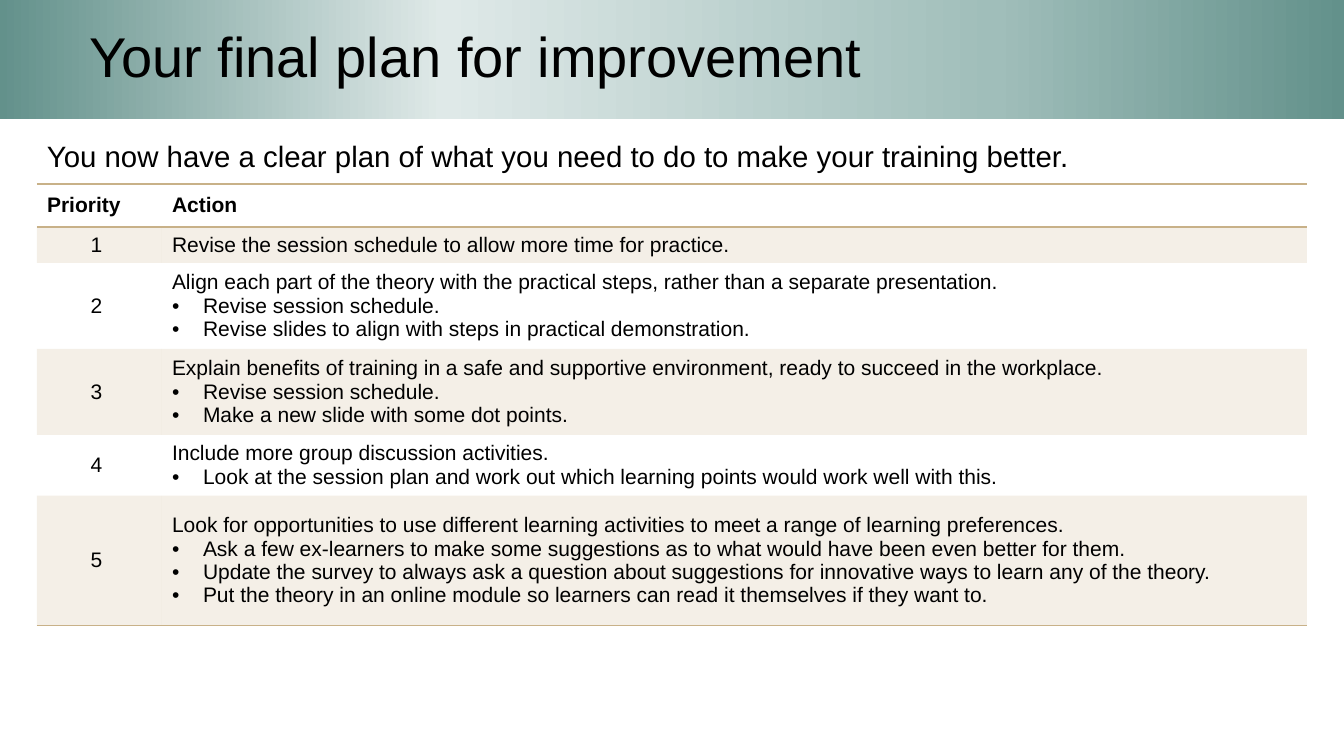
import pptx
import pptx.util
import pptx.oxml
import pptx.oxml.ns
import pptx.dml.color
import pptx.enum.shapes
import pptx.enum.text

PX = 914400 / 100.8
BLACK, SAND = "000000", "C8B188"
STOPS = [(0, "63918B"), (33, "DFE9E8"), (74, "A0BEBA"), (100, "63918B")]
ROWS = [
    (36, ["Revise the session schedule to allow more time for practice."]),
    (86, ["Align each part of the theory with the practical steps, rather than a separate presentation.",
          "Revise session schedule.",
          "Revise slides to align with steps in practical demonstration."]),
    (86, ["Explain benefits of training in a safe and supportive environment, ready to succeed in the workplace.",
          "Revise session schedule.",
          "Make a new slide with some dot points."]),
    (60, ["Include more group discussion activities.",
          "Look at the session plan and work out which learning points would work well with this."]),
    (130, ["Look for opportunities to use different learning activities to meet a range of learning preferences.",
           "Ask a few ex-learners to make some suggestions as to what would have been even better for them.",
           "Update the survey to always ask a question about suggestions for innovative ways to learn any of the theory.",
           "Put the theory in an online module so learners can read it themselves if they want to."]),
]


def px(n):
    return pptx.util.Emu(round(n * PX))


def tint(code):
    return pptx.dml.color.RGBColor.from_string(code)


def node(xml):
    return pptx.oxml.parse_xml(xml.replace(" ", f" {pptx.oxml.ns.nsdecls('a')} ", 1))


def write(para, text, size, bold=False):
    run = para.add_run()
    run.text = text
    run.font.name = "Arial"
    run.font.size = pptx.util.Pt(size)
    run.font.bold = bold
    run.font.color.rgb = tint(BLACK)


def banner(slide, box, text):
    shape = slide.shapes.add_shape(pptx.enum.shapes.MSO_SHAPE.RECTANGLE, *map(px, box))
    shape.shadow.inherit = False
    shape.line.fill.background()
    shape.fill.gradient()
    shape.fill.gradient_angle = 0
    stops = shape._element.spPr.find(".//" + pptx.oxml.ns.qn("a:gsLst"))
    for stop in list(stops):
        stops.remove(stop)
    for spot, code in STOPS:
        stops.append(node(f'<a:gs pos="{spot * 1000}"><a:srgbClr val="{code}"/></a:gs>'))
    frame = shape.text_frame
    frame.word_wrap = True
    frame.margin_left = px(89)
    frame.vertical_anchor = pptx.enum.text.MSO_ANCHOR.MIDDLE
    para = frame.paragraphs[0]
    para.alignment = pptx.enum.text.PP_ALIGN.LEFT
    para.line_spacing = 0.9
    write(para, text, 40)


def intro(slide, box, text):
    frame = slide.shapes.add_textbox(*map(px, box)).text_frame
    frame.word_wrap = True
    write(frame.paragraphs[0], text, 21)


def rule(cell, side):
    cell._tc.get_or_add_tcPr().append(node(
        f'<a:{side} w="12700"><a:solidFill><a:srgbClr val="{SAND}"/></a:solidFill></a:{side}>'))


def shade(cell, band):
    if not band:
        cell.fill.background()
        return
    cell.fill.solid()
    cell.fill.fore_color.rgb = tint(SAND)
    props = cell._tc.tcPr.find(pptx.oxml.ns.qn("a:solidFill"))
    color = props.find(pptx.oxml.ns.qn("a:srgbClr"))
    color.append(node('<a:alpha val="20000"/>'))


def fill(cell, lines, bold=False):
    cell.vertical_anchor = pptx.enum.text.MSO_ANCHOR.MIDDLE
    frame = cell.text_frame
    for i, line in enumerate(lines):
        para = frame.add_paragraph() if i else frame.paragraphs[0]
        if i:
            props = para._p.get_or_add_pPr()
            props.set("marL", str(int(px(31))))
            props.set("indent", str(-int(px(31))))
            props.append(node('<a:buFont typeface="Arial"/>'))
            props.append(node('<a:buChar char="•"/>'))
        write(para, line, 15, bold)


def plan(slide, box):
    left, top, width, height = box
    table = slide.shapes.add_table(len(ROWS) + 1, 2, *map(px, box)).table
    table.first_row = table.horz_banding = False
    style = table._tbl.tblPr.find(pptx.oxml.ns.qn("a:tableStyleId"))
    style.text = "{2D5ABB26-0587-4C30-8999-92F81FD0307C}"
    for col, size in zip(table.columns, (125, width - 125)):
        col.width = px(size)
    table.rows[0].height = px(height - sum(size for size, _ in ROWS))
    for cell, head in zip(table.rows[0].cells, ("Priority", "Action")):
        fill(cell, [head], True)
        rule(cell, "lnT")
        rule(cell, "lnB")
        shade(cell, False)
    for rank, (size, lines) in enumerate(ROWS, 1):
        row = table.rows[rank]
        row.height = px(size)
        first, last = row.cells
        fill(first, [str(rank)])
        first.text_frame.paragraphs[0].alignment = pptx.enum.text.PP_ALIGN.CENTER
        first.margin_right = px(16)
        fill(last, lines)
        for cell in (first, last):
            if rank == len(ROWS):
                rule(cell, "lnB")
            shade(cell, rank % 2)


def main():
    deck = pptx.Presentation()
    deck.slide_width, deck.slide_height = px(1344), px(756)
    slide = deck.slides.add_slide(deck.slide_layouts[6])
    banner(slide, (0, 0, 1344, 119), "Your final plan for improvement")
    intro(slide, (37, 133, 1270, 45),
          "You now have a clear plan of what you need to do to make your training better.")
    plan(slide, (37, 184, 1270, 441))
    deck.save("out.pptx")


if __name__ == "__main__":
    main()
